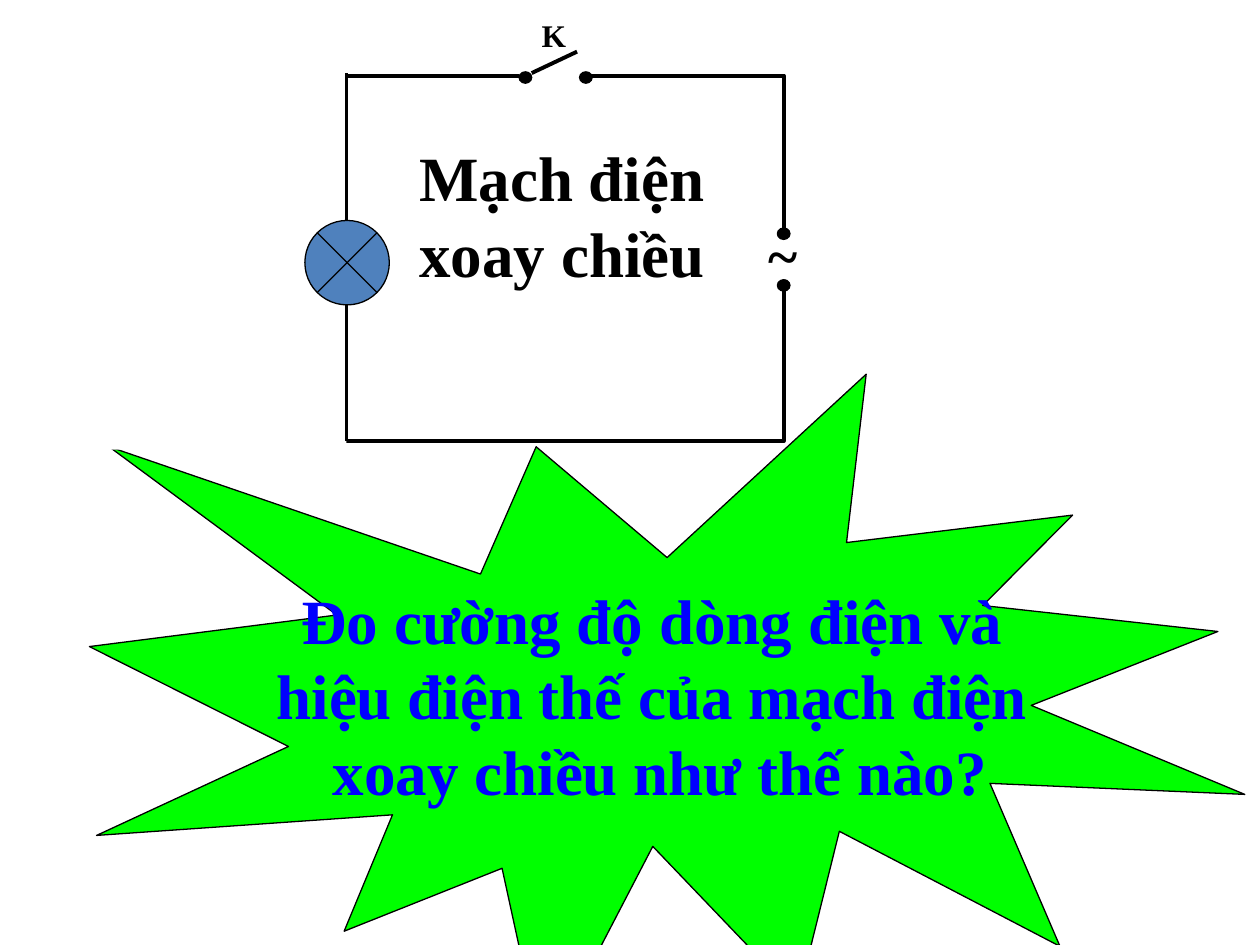
from pptx import Presentation
from pptx.dml.color import RGBColor
from pptx.enum.shapes import MSO_CONNECTOR, MSO_SHAPE
from pptx.enum.text import MSO_ANCHOR, MSO_AUTO_SIZE, PP_ALIGN
from pptx.oxml.ns import qn
from pptx.util import Inches, Pt
from lxml.etree import SubElement


def paint(color_format, value):
    color_format.rgb = RGBColor.from_string(value)


def add_figure(parent, preset, box, fill, outline=None):
    figure = parent.add_shape(preset, *[Inches(v) for v in box])
    figure.shadow.inherit = False
    figure.fill.solid()
    paint(figure.fill.fore_color, fill)
    if outline:
        paint(figure.line.color, outline)
        figure.line.width = Pt(0.75)
    else:
        figure.line.fill.background()
    return figure


presentation = Presentation()
presentation.slide_width = Inches(10)
presentation.slide_height = Inches(7.5)
slide = presentation.slides.add_slide(presentation.slide_layouts[6])

question = add_figure(slide.shapes, MSO_SHAPE.EXPLOSION1, (0.71, 2.97, 9.17, 5.42), "00FF00", "000000")
question_frame = question.text_frame
question_frame.word_wrap = False
question_frame.vertical_anchor = MSO_ANCHOR.MIDDLE
question_frame.text = "Đo cường độ dòng điện và \nhiệu điện thế của mạch điện \nxoay chiều như thế nào?"
for paragraph in question_frame.paragraphs:
    paragraph.alignment = PP_ALIGN.CENTER
    paragraph.font.name = "Times New Roman"
    paragraph.font.size = Pt(36)
    paragraph.font.bold = True
    paint(paragraph.font.color, "0000FF")

circuit = slide.shapes.add_group_shape().shapes

loop_builder = circuit.build_freeform(Inches(1.2), Inches(0.6))
loop_builder.add_line_segments(
    [(Inches(x), Inches(y)) for x, y in [(6.22, 0.6), (6.22, 3.5), (1.2, 3.5)]], close=False
)
loop = loop_builder.convert_to_shape()
loop.shadow.inherit = False
loop.fill.background()
paint(loop.line.color, "000000")
loop.line.width = Pt(2.25)

for gap in [(4.12, 0.53, 0.52, 0.19), (6.02, 1.84, 0.42, 0.38), (0.83, 0.57, 1.92, 3)]:
    add_figure(circuit, MSO_SHAPE.RECTANGLE, gap, "FFFFFF")

for x, y in [(4.12, 0.57), (4.6, 0.57), (6.17, 1.81), (6.17, 2.22)]:
    add_figure(circuit, MSO_SHAPE.OVAL, (x, y, 0.1, 0.09), "000000", "000000")

switch_arm = (4.22, 0.58, 4.58, 0.41)
lamp_wire = (2.75, 0.58, 2.75, 3.5)
for ends in [switch_arm, lamp_wire]:
    wire = circuit.add_connector(MSO_CONNECTOR.STRAIGHT, *[Inches(v) for v in ends])
    paint(wire.line.color, "000000")
    wire.line.width = Pt(2.25)
    SubElement(wire._element.spPr, qn("a:effectLst"))

add_figure(circuit, MSO_SHAPE.FLOWCHART_SUMMING_JUNCTION, (2.42, 1.75, 0.67, 0.67), "4F81BD", "000000")

labels = [
    (circuit, "K", (4.2, 0.08, 1.05, 0.4), 18, 2, PP_ALIGN.LEFT),
    (circuit, "~", (6, 1.7, 0.75, 0.63), 32, 4, PP_ALIGN.LEFT),
    (slide.shapes, "Mạch điện xoay chiều", (3.17, 1.05, 2.58, 1.31), 36, 4, PP_ALIGN.CENTER),
]
for parent, text, box, size, space, alignment in labels:
    label_frame = parent.add_textbox(*[Inches(v) for v in box]).text_frame
    label_frame.word_wrap = True
    label_frame.auto_size = MSO_AUTO_SIZE.SHAPE_TO_FIT_TEXT
    label_frame.text = text
    paragraph = label_frame.paragraphs[0]
    paragraph.alignment = alignment
    paragraph.space_before = Pt(space)
    paragraph.font.name = "Times New Roman"
    paragraph.font.size = Pt(size)
    paragraph.font.bold = True
    paint(paragraph.font.color, "000000")

presentation.save("out.pptx")
